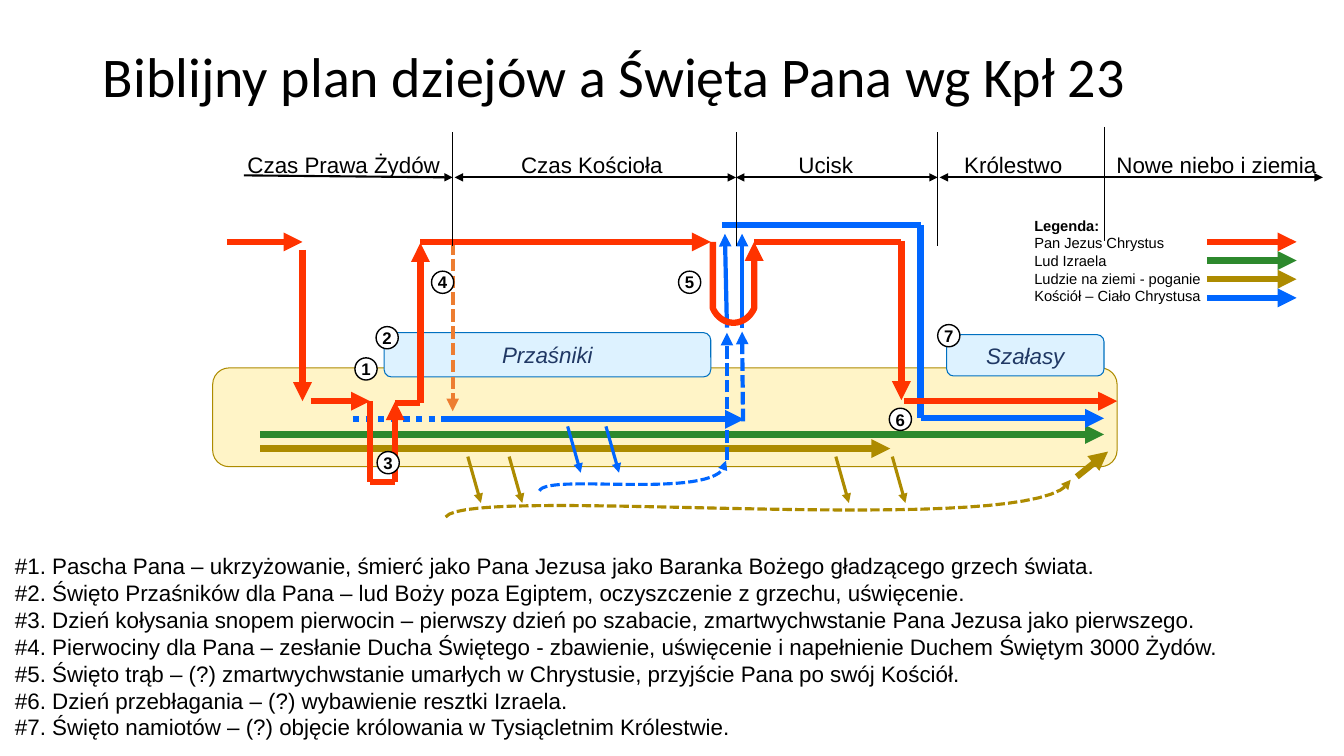
from pptx import Presentation
from pptx.dml.color import RGBColor
from pptx.enum.dml import MSO_LINE
from pptx.enum.shapes import MSO_CONNECTOR, MSO_SHAPE
from pptx.enum.text import MSO_ANCHOR, MSO_AUTO_SIZE, PP_ALIGN
from pptx.oxml.ns import qn
from pptx.util import Inches, Pt
from lxml import etree

STRAIGHT = MSO_CONNECTOR.STRAIGHT
OVAL, ROUNDED = MSO_SHAPE.OVAL, MSO_SHAPE.ROUNDED_RECTANGLE
DASH, DOT = MSO_LINE.SQUARE_DOT, MSO_LINE.ROUND_DOT
LEFT, CENTER = PP_ALIGN.LEFT, PP_ALIGN.CENTER
TOP, MIDDLE = MSO_ANCHOR.TOP, MSO_ANCHOR.MIDDLE


class Theme:
    black, white, navy = "000000", "FFFFFF", "203864"
    jesus, israel, gentiles, church = "FF3300", "2D892D", "AD8B00", "0066FF"
    spirit = "ED7D31"
    earth, feast, feast_edge = "FFF4C7", "DDF2FF", "0070C0"
    heading_font, body_font = "Calibri", "Arial"
    title, body, badge, legend = 40, 16, 12, 10.5
    thick, medium, thin, axis, edge, hairline = 4.5, 3, 2.25, 1.5, 0.75, 0.5


T = Theme
TITLE = "Biblijny plan dziejów a Święta Pana wg Kpł 23"
NOTES = [
    "#1. Pascha Pana – ukrzyżowanie, śmierć jako Pana Jezusa jako Baranka Bożego gładzącego grzech świata.",
    "#2. Święto Przaśników dla Pana – lud Boży poza Egiptem, oczyszczenie z grzechu, uświęcenie.",
    "#3. Dzień kołysania snopem pierwocin – pierwszy dzień po szabacie, zmartwychwstanie Pana Jezusa jako pierwszego.",
    "#4. Pierwociny dla Pana – zesłanie Ducha Świętego - zbawienie, uświęcenie i napełnienie Duchem Świętym 3000 Żydów.",
    "#5. Święto trąb – (?) zmartwychwstanie umarłych w Chrystusie, przyjście Pana po swój Kościół.",
    "#6. Dzień przebłagania – (?) wybawienie resztki Izraela.",
    "#7. Święto namiotów – (?) objęcie królowania w Tysiącletnim Królestwie.",
]
LEGEND_TITLE = "Legenda:"
LEGEND = [
    ("Pan Jezus Chrystus", T.jesus),
    ("Lud Izraela", T.israel),
    ("Ludzie na ziemi - poganie", T.gentiles),
    ("Kościół – Ciało Chrystusa", T.church),
]
# label, left, width
ERAS = [
    ("Czas Prawa Żydów", 2.33, 2.16),
    ("Czas Kościoła", 4.91, 1.92),
    ("Ucisk", 7.62, 1.14),
    ("Królestwo", 9.43, 1.24),
    ("Nowe niebo i ziemia", 10.95, 2.23),
]
# x, top
ERA_BORDERS = [(4.49, 1.31), (7.3, 1.31), (9.3, 1.31), (10.95, 1.26)]
# start, end, arrowhead at start
ERA_SPANS = [
    ((2.42, 1.74), (4.49, 1.76), False),
    ((4.51, 1.76), (7.3, 1.76), True),
    ((7.3, 1.76), (9.3, 1.76), True),
    ((9.32, 1.76), (13.12, 1.76), True),
]
# label, box, fill, edge
PANELS = [
    ("", (2.11, 3.65, 8.97, 0.98), T.earth, T.gentiles),
    ("Szałasy", (9.39, 3.32, 1.56, 0.41), T.feast, T.feast_edge),
    ("Przaśniki", (3.81, 3.3, 3.24, 0.44), T.feast, T.feast_edge),
]
# colour, width, dash, [(start, end, arrowhead at end)]
PATHS = [
    (T.gentiles, T.thick, None, [
        ((2.58, 4.45), (8.83, 4.45), True),
        ((10.68, 4.73), (10.99, 4.48), True)]),
    (T.israel, T.thick, None, [((2.58, 4.31), (10.95, 4.31), True)]),
    (T.church, T.thick, DOT, [((3.5, 4.16), (4.67, 4.16), False)]),
    (T.church, T.thick, None, [
        ((4.41, 4.16), (7.38, 4.16), True),
        ((7.16, 2.23), (9.13, 2.23), False),
        ((9.13, 2.23), (9.13, 4.15), False),
        ((9.13, 4.15), (10.95, 4.15), True)]),
    (T.church, T.medium, None, [
        ((7.36, 3.25), (7.36, 2.32), True),
        ((7.21, 3.25), (7.19, 2.32), True)]),
    (T.church, T.medium, DASH, [
        ((7.37, 4.18), (7.36, 3.29), True),
        ((7.21, 4.56), (7.21, 3.3), True)]),
    (T.spirit, T.medium, DASH, [((4.49, 2.4), (4.49, 4.08), True)]),
    (T.jesus, T.thick, None, [
        ((2.25, 2.4), (3, 2.4), True),
        ((3, 2.48), (3, 3.98), True),
        ((3.08, 3.98), (3.67, 3.98), True),
        ((3.67, 3.98), (3.67, 4.78), False),
        ((3.67, 4.78), (3.92, 4.78), False),
        ((3.92, 4.78), (3.92, 3.98), True),
        ((3.92, 4), (4.17, 4), False),
        ((4.17, 4), (4.17, 2.41), True),
        ((4.17, 2.4), (7.05, 2.4), True),
        ((7.48, 2.4), (8.94, 2.4), False),
        ((8.94, 2.39), (8.94, 3.97), True),
        ((8.97, 3.98), (11.08, 3.98), True)]),
]
# colour, top, left edges of the short slanted arrows
FALLING_AWAY = [
    (T.gentiles, 4.53, (4.64, 5.05, 8.29, 8.85)),
    (T.church, 4.23, (5.63, 6.01)),
]
# colour, width, dash, lead-in points, Bezier control points, closing points
CURVES = [
    (T.jesus, T.thick, None, [(7.07, 2.4)],
     [(7.07, 3.06), (7.16, 3.25), (7.39, 3.25), (7.48, 3.06)], [(7.48, 2.4)]),
    (T.church, T.thin, DASH, [],
     [(5.35, 4.87), (5.43, 4.68), (7.21, 4.99), (7.2, 4.57)], []),
    (T.gentiles, T.thin, DASH, [],
     [(4.42, 5.13), (4.65, 4.79), (10.4, 5.38), (10.62, 4.76)], []),
]
BADGE_SIZE = 0.22
BADGES = [(3.52, 3.55), (3.73, 3.24), (3.74, 4.48), (4.28, 2.69),
          (6.73, 2.69), (8.82, 4.05), (9.3, 3.22)]


def rgb(value):
    return RGBColor.from_string(value)


def style_stroke(shape, color, width, dash=None, head=False, tail=False):
    shape.line.color.rgb = rgb(color)
    shape.line.width = Pt(width)
    if dash is not None:
        shape.line.dash_style = dash
    properties = shape._element.spPr
    outline = properties.find(qn("a:ln"))
    for wanted, end in ((head, "a:headEnd"), (tail, "a:tailEnd")):
        if wanted:
            etree.SubElement(outline, qn(end), type="triangle")
    if properties.find(qn("a:effectLst")) is None:
        etree.SubElement(properties, qn("a:effectLst"))


def add_line(start, end, *stroke, **ends):
    line = slide.shapes.add_connector(STRAIGHT, *map(Inches, start + end))
    style_stroke(line, *stroke, **ends)


def bezier(controls, steps=32):
    """Points along a cubic curve."""
    for step in range(steps + 1):
        t = step / steps
        weights = ((1 - t) ** 3, 3 * t * (1 - t) ** 2, 3 * t * t * (1 - t), t ** 3)
        yield tuple(sum(w * c[axis] for w, c in zip(weights, controls)) for axis in (0, 1))


def add_curve(color, width, dash, lead_in, controls, closing):
    points = [tuple(map(Inches, p)) for p in [*lead_in, *bezier(controls), *closing]]
    builder = slide.shapes.build_freeform(*points[0])
    builder.add_line_segments(points[1:], close=False)
    curve = builder.convert_to_shape()
    curve.fill.background()
    style_stroke(curve, color, width, dash, tail=True)


def write(frame, lines, size, color=T.black, font=T.body_font, align=LEFT,
          anchor=TOP, wrap=True, bold=False, italic=False):
    frame.word_wrap = wrap
    frame.vertical_anchor = anchor
    frame.text = "\n".join(lines)
    for paragraph in frame.paragraphs:
        paragraph.alignment = align
        style = paragraph.font
        style.name, style.size, style.color.rgb = font, Pt(size), rgb(color)
        style.bold, style.italic = bold, italic


def add_text(box, lines, size, margin=None, **style):
    frame = slide.shapes.add_textbox(*map(Inches, box)).text_frame
    if margin is not None:
        frame.margin_left = frame.margin_right = Inches(margin)
        frame.margin_top = frame.margin_bottom = Inches(margin)
    write(frame, lines, size, **style)
    return frame


def add_panel(kind, box, fill, edge, width, label, size, **style):
    panel = slide.shapes.add_shape(kind, *map(Inches, box))
    panel.fill.solid()
    panel.fill.fore_color.rgb = rgb(fill)
    style_stroke(panel, edge, width)
    if label:
        write(panel.text_frame, [label], size, align=CENTER, anchor=MIDDLE, wrap=False, **style)


deck = Presentation()
deck.slide_width, deck.slide_height = Inches(13.33), Inches(7.5)
slide = deck.slides.add_slide(deck.slide_layouts[5])

title = slide.shapes.title
title.left, title.top, title.width, title.height = map(Inches, (0.92, 0.4, 11.5, 0.78))
write(title.text_frame, [TITLE], T.title, font=T.heading_font, anchor=MIDDLE)
title.text_frame.auto_size = MSO_AUTO_SIZE.NONE
title.text_frame.paragraphs[0].line_spacing = 0.9

for label, box, fill, edge in PANELS:
    add_panel(ROUNDED, box, fill, edge, T.edge, label, T.body, color=T.navy, italic=True)
for color, width, dash, segments in PATHS:
    for start, end, arrow in segments:
        add_line(start, end, color, width, dash, tail=arrow)
for color, top, lefts in FALLING_AWAY:
    for left in lefts:
        add_line((left, top), (left + 0.13, top + 0.46), color, T.thin, tail=True)
for curve in CURVES:
    add_curve(*curve)

for x, top in ERA_BORDERS:
    add_line((x, top), (x, top + 1.13), T.black, T.hairline)
for start, end, both in ERA_SPANS:
    add_line(start, end, T.black, T.axis, head=both, tail=True)
for label, left, width in ERAS:
    add_text((left, 1.46, width, 0.35), [label], T.body, margin=0.04, align=CENTER, anchor=MIDDLE)

for number, corner in enumerate(BADGES, 1):
    add_panel(OVAL, corner + (BADGE_SIZE, BADGE_SIZE), T.white, T.black, 1,
              str(number), T.badge, bold=True)

legend = add_text((10.16, 2.1, 1.99, 0.98), [LEGEND_TITLE] + [name for name, _ in LEGEND], T.legend)
legend.paragraphs[0].font.bold = True
for row, (_, color) in enumerate(LEGEND):
    y = 2.4 + row * 0.185
    add_line((11.97, y), (12.86, y), color, T.thick, tail=True)

add_text((0.05, 5.43, 12.39, 1.99), NOTES, T.body)
deck.save("out.pptx")
